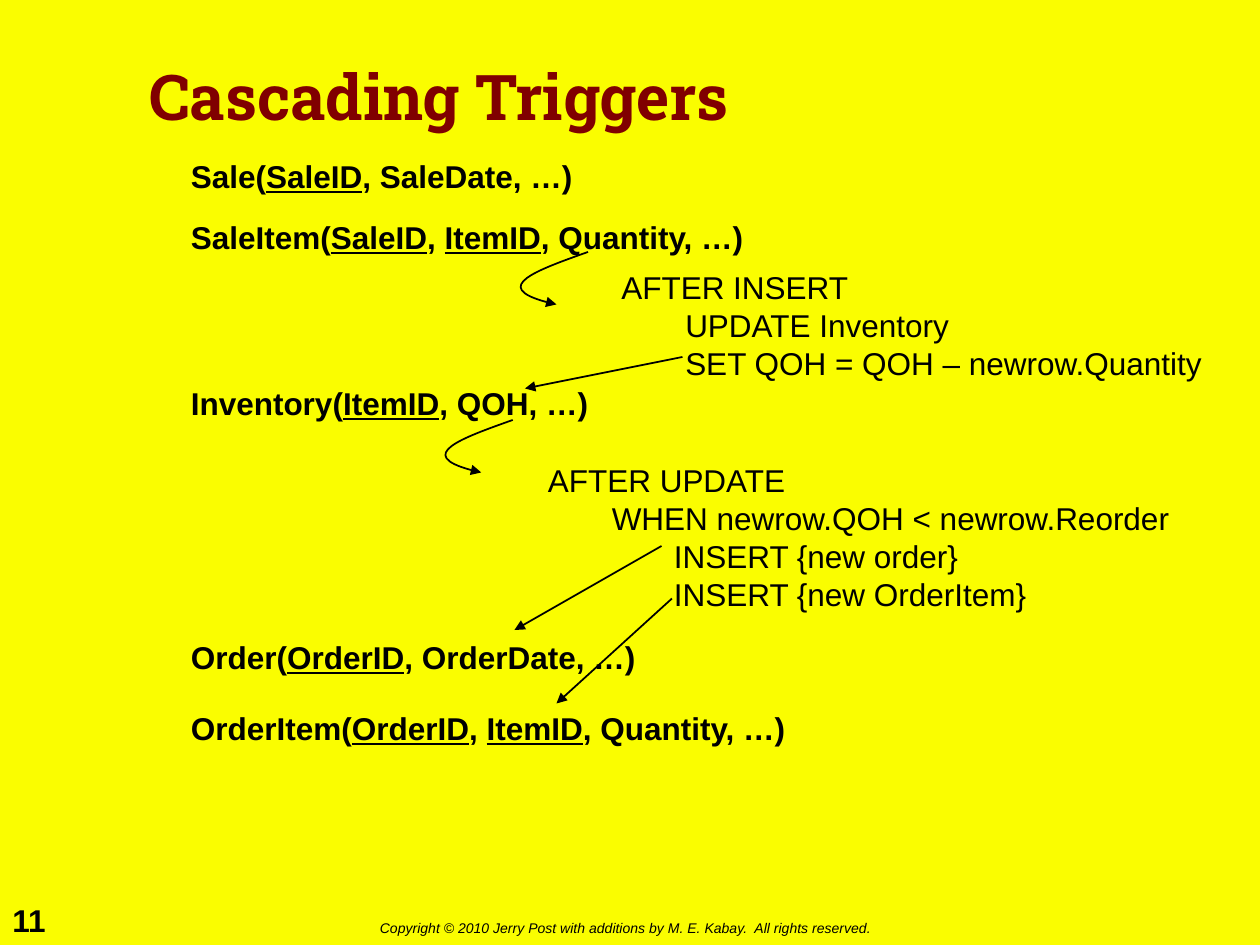
from dataclasses import dataclass

from lxml import etree
from pptx import Presentation
from pptx.dml.color import RGBColor
from pptx.enum.shapes import MSO_CONNECTOR
from pptx.enum.text import MSO_ANCHOR, MSO_AUTO_SIZE, PP_ALIGN
from pptx.oxml.ns import qn
from pptx.slide import Slide
from pptx.util import Pt

STRAIGHT = MSO_CONNECTOR.STRAIGHT
MIDDLE = MSO_ANCHOR.MIDDLE
NO_AUTO_SIZE = MSO_AUTO_SIZE.NONE
LEFT = PP_ALIGN.LEFT
TITLE_ONLY = 5

Point = tuple[float, float]
Box = tuple[float, float, float, float]


@dataclass(frozen=True)
class Theme:
    background: RGBColor = RGBColor(0xFA, 0xFD, 0x00)
    title: RGBColor = RGBColor(0x80, 0x00, 0x00)
    ink: RGBColor = RGBColor(0x00, 0x00, 0x00)
    title_font: str = "Roboto Slab"
    body_font: str = "Arial"
    title_size: float = 36
    body_size: float = 18
    footer_size: float = 8
    line_width: float = 1


@dataclass(frozen=True)
class Relation:
    name: str
    keys: tuple[str, ...]
    columns: str
    top: float
    width: float


@dataclass(frozen=True)
class Trigger:
    box: Box
    lines: tuple[str, ...]


THEME = Theme()
RELATION_LEFT = 102
RELATION_HEIGHT = 29
TAB_STOPS = (36.5, 72)

RELATIONS = (
    Relation("Sale", ("SaleID",), "SaleDate", 86, 234),
    Relation("SaleItem", ("SaleID", "ItemID"), "Quantity", 121, 332),
    Relation("Inventory", ("ItemID",), "QOH", 216, 243),
    Relation("Order", ("OrderID",), "OrderDate", 361, 270),
    Relation("OrderItem", ("OrderID", "ItemID"), "Quantity", 401.5, 356),
)
TRIGGERS = (
    Trigger(
        (348, 149.7, 354, 72),
        ("AFTER INSERT", "\tUPDATE Inventory", "\tSET QOH = QOH – newrow.Quantity"),
    ),
    Trigger(
        (306, 260.2, 372, 94),
        (
            "AFTER UPDATE",
            "\tWHEN newrow.QOH < newrow.Reorder",
            "\t\tINSERT {new order}",
            "\t\tINSERT {new OrderItem}",
        ),
    ),
)
ARROWS: tuple[tuple[Point, Point], ...] = (
    ((390, 204), (300, 222)),
    ((378, 312), (294, 360)),
    ((384, 342), (318, 402)),
)
CURVE_STARTS: tuple[Point, ...] = ((336, 144), (293, 240))
CURVE_OFFSETS: tuple[Point, ...] = ((-29.5, 10.5), (-59, 21), (-18, 30))


def style_font(font, size: float, name: str = THEME.body_font,
               color: RGBColor = THEME.ink, bold: bool = False,
               italic: bool = False) -> None:
    font.name = name
    font.size = Pt(size)
    font.bold = bold
    font.italic = italic
    font.color.rgb = color


def add_text_box(slide: Slide, box: Box, wrap: bool = False):
    shape = slide.shapes.add_textbox(*map(Pt, box))
    shape.text_frame.word_wrap = wrap
    return shape.text_frame


def add_label(slide: Slide, box: Box, text: str, size: float,
              bold: bool = False, italic: bool = False) -> None:
    paragraph = add_text_box(slide, box).paragraphs[0]
    paragraph.text = text
    style_font(paragraph.font, size, bold=bold, italic=italic)


def add_title(slide: Slide, text: str) -> None:
    title = slide.shapes.title
    title.left, title.top, title.width, title.height = map(Pt, (78, 12, 564, 90))
    frame = title.text_frame
    frame.vertical_anchor = MIDDLE
    frame.auto_size = NO_AUTO_SIZE
    paragraph = frame.paragraphs[0]
    paragraph.text = text
    paragraph.alignment = LEFT
    paragraph.line_spacing = 0.9
    style_font(paragraph.font, THEME.title_size, THEME.title_font, THEME.title, bold=True)


def add_relation(slide: Slide, relation: Relation) -> None:
    box = (RELATION_LEFT, relation.top, relation.width, RELATION_HEIGHT)
    paragraph = add_text_box(slide, box).paragraphs[0]
    paragraph.add_run().text = f"{relation.name}("
    for key in relation.keys:
        key_run = paragraph.add_run()
        key_run.text = key
        key_run.font.underline = True
        paragraph.add_run().text = ", "
    paragraph.add_run().text = f"{relation.columns}, …)"
    style_font(paragraph.font, THEME.body_size, bold=True)


def add_trigger(slide: Slide, trigger: Trigger) -> None:
    frame = add_text_box(slide, trigger.box, wrap=True)
    for index, line in enumerate(trigger.lines):
        paragraph = frame.add_paragraph() if index else frame.paragraphs[0]
        paragraph.add_run().text = line
        properties = paragraph._p.get_or_add_pPr()
        tabs = etree.SubElement(properties, qn("a:tabLst"))
        for stop in TAB_STOPS:
            etree.SubElement(tabs, qn("a:tab"), pos=str(Pt(stop)), algn="l")
        style_font(paragraph.font, THEME.body_size)


def style_arrow(line) -> None:
    line.color.rgb = THEME.ink
    line.width = Pt(THEME.line_width)
    etree.SubElement(line._get_or_add_ln(), qn("a:tailEnd"), type="triangle")


def add_arrow(slide: Slide, start: Point, end: Point) -> None:
    connector = slide.shapes.add_connector(STRAIGHT, *map(Pt, start + end))
    style_arrow(connector.line)
    etree.SubElement(connector._element.spPr, qn("a:effectLst"))


def add_curved_arrow(slide: Slide, start: Point) -> None:
    left, top = start
    points = [(Pt(left + x), Pt(top + y)) for x, y in CURVE_OFFSETS]
    builder = slide.shapes.build_freeform(Pt(left), Pt(top))
    builder.add_line_segments(points, close=False)
    shape = builder.convert_to_shape()
    segments = shape._element.xpath(".//a:lnTo")
    outline = segments[0].getparent()
    curve = etree.SubElement(outline, qn("a:cubicBezTo"))
    for segment in segments:
        curve.append(segment[0])
        outline.remove(segment)
    shape.fill.background()
    style_arrow(shape.line)
    shape.shadow.inherit = False


def main() -> None:
    presentation = Presentation()
    presentation.slide_width, presentation.slide_height = Pt(720), Pt(540)
    slide = presentation.slides.add_slide(presentation.slide_layouts[TITLE_ONLY])
    slide.background.fill.solid()
    slide.background.fill.fore_color.rgb = THEME.background

    add_label(slide, (0, 511.2, 36, 29), "11", THEME.body_size, bold=True)
    add_label(
        slide, (210, 522, 304, 17),
        "Copyright © 2010 Jerry Post with additions by M. E. Kabay.  All rights reserved.",
        THEME.footer_size, italic=True,
    )
    add_title(slide, "Cascading Triggers")
    for relation in RELATIONS:
        add_relation(slide, relation)
    for trigger in TRIGGERS:
        add_trigger(slide, trigger)
    for start in CURVE_STARTS:
        add_curved_arrow(slide, start)
    for start, end in ARROWS:
        add_arrow(slide, start, end)
    presentation.save("out.pptx")


if __name__ == "__main__":
    main()
